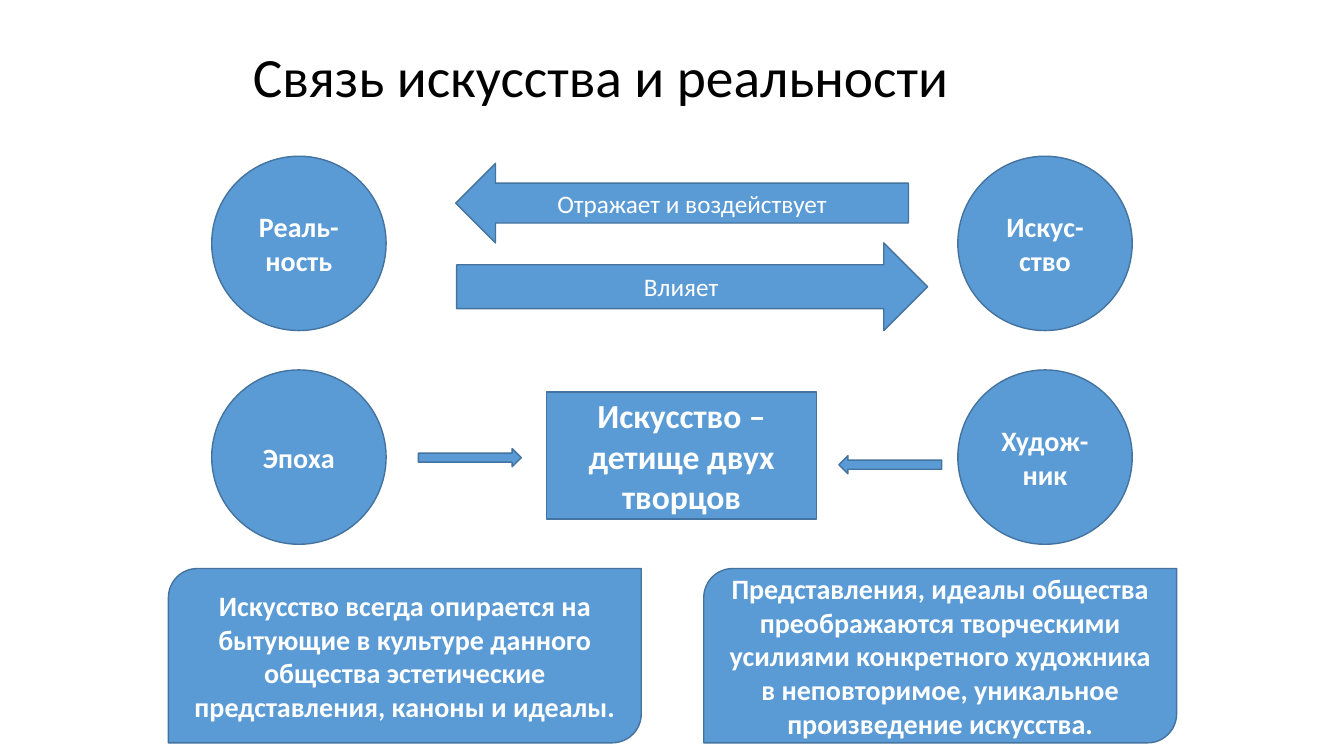
from pptx import Presentation
from pptx.dml.color import RGBColor
from pptx.enum.shapes import MSO_SHAPE as Shape
from pptx.enum.text import MSO_ANCHOR as Anchor, PP_ALIGN as Align
from pptx.util import Inches, Pt

COLORS = {"fill": "5B9BD5", "line": "43739E", "light": "FFFFFF", "title": "000000"}
FONT = "Calibri"

# Content
TITLE = "Связь искусства и реальности"
CIRCLE_ROWS = [("Реаль-ность", "Искус-ство"), ("Эпоха", "Худож-ник")]
CENTER = "Искусство – детище двух творцов"
# kind, label, (left, top, width, height)
ARROWS = [
    (Shape.LEFT_ARROW, "Отражает и воздействует", (4.52, 1.62, 4.49, 0.79)),
    (Shape.RIGHT_ARROW, "Влияет", (4.53, 2.41, 4.67, 0.87)),
    (Shape.LEFT_ARROW, "", (8.32, 4.52, 1.02, 0.18)),
    (Shape.RIGHT_ARROW, "", (4.15, 4.45, 1.02, 0.18)),
]
CONCLUSIONS = [
    "Искусство всегда опирается на бытующие в культуре данного общества "
    "эстетические представления, каноны и идеалы.",
    "Представления, идеалы общества преображаются творческими усилиями "
    "конкретного художника в неповторимое, уникальное произведение искусства.",
]

# Layout, in inches
CIRCLE_LEFT, CIRCLE_TOP, CIRCLE_SIZE = 2.1, 1.55, 1.73
CIRCLE_STEP_X, CIRCLE_STEP_Y = 7.4, 2.12
CONCLUSION_LEFT, CONCLUSION_STEP = 1.67, 5.31

prs = Presentation()
prs.slide_width, prs.slide_height = Inches(13.33), Inches(7.5)
slide = prs.slides.add_slide(prs.slide_layouts[6])


def write(holder, text, size=20, bold=True, color="light", align=Align.CENTER, spacing=1.0):
    frame = holder.text_frame
    frame.word_wrap = True
    frame.vertical_anchor = Anchor.MIDDLE
    paragraph = frame.paragraphs[0]
    paragraph.alignment = align
    paragraph.line_spacing = spacing
    run = paragraph.add_run()
    run.text = text
    run.font.name = FONT
    run.font.size = Pt(size)
    run.font.bold = bold
    run.font.color.rgb = RGBColor.from_string(COLORS[color])


def add_block(kind, box, text="", **text_format):
    block = slide.shapes.add_shape(kind, *map(Inches, box))
    block.shadow.inherit = False
    block.fill.solid()
    block.fill.fore_color.rgb = RGBColor.from_string(COLORS["fill"])
    block.line.color.rgb = RGBColor.from_string(COLORS["line"])
    block.line.width = Pt(1)
    if text:
        write(block, text, **text_format)


# Title
title = slide.shapes.add_textbox(*map(Inches, (2.41, 0.21, 8.48, 1.15)))
write(title, TITLE, size=39.6, bold=False, color="title", align=Align.LEFT, spacing=0.9)

# Circles in a two by two grid
for row, labels in enumerate(CIRCLE_ROWS):
    for col, label in enumerate(labels):
        left = CIRCLE_LEFT + col * CIRCLE_STEP_X
        top = CIRCLE_TOP + row * CIRCLE_STEP_Y
        add_block(Shape.OVAL, (left, top, CIRCLE_SIZE, CIRCLE_SIZE), label)

# Arrows between the circles
for kind, label, box in ARROWS:
    add_block(kind, box, label, size=18, bold=False)

# Central statement
add_block(Shape.RECTANGLE, (5.42, 3.89, 2.68, 1.26), CENTER, size=24)

# Conclusions along the bottom
for col, conclusion in enumerate(CONCLUSIONS):
    left = CONCLUSION_LEFT + col * CONCLUSION_STEP
    add_block(Shape.ROUND_2_DIAG_RECTANGLE, (left, 5.64, 4.69, 1.73), conclusion)

prs.save("out.pptx")
